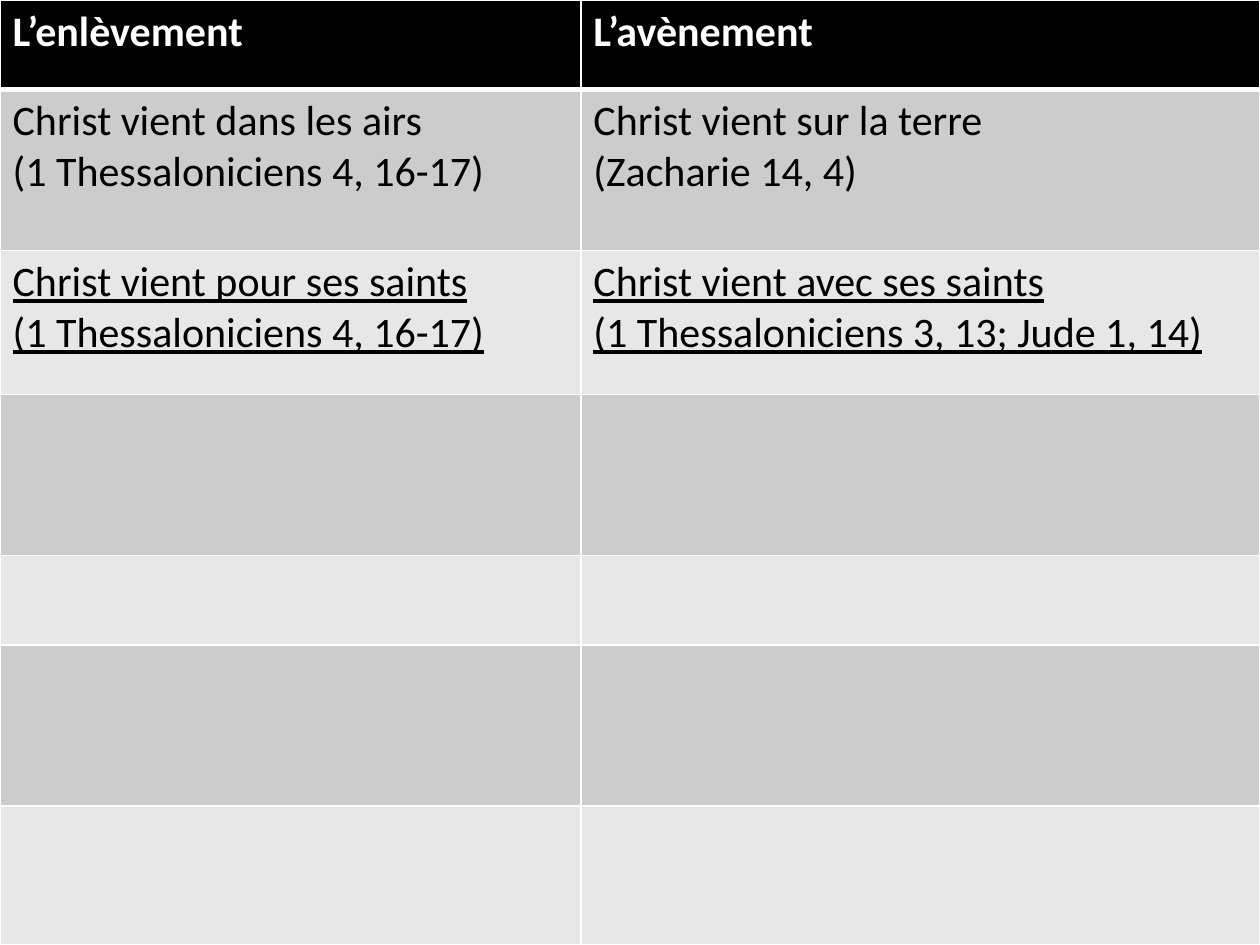
"""Build a slide with a table comparing the rapture and the second coming."""
from lxml import etree
from pptx import Presentation
from pptx import util as u
from pptx.dml.color import RGBColor
from pptx.oxml.ns import qn

COLORS = {"head": "000000", "odd": "CCCCCC", "even": "E7E7E7",
          "light": "FFFFFF", "dark": "000000"}
COLUMNS = [11.71, 13.69]
ROWS = [
    (1.8, ["L’enlèvement", "L’avènement"]),
    (3.25, ["Christ vient dans les airs\n(1 Thessaloniciens 4, 16-17)",
            "Christ vient sur la terre\n(Zacharie 14, 4)"]),
    (2.9, ["Christ vient pour ses saints\n(1 Thessaloniciens 4, 16-17)",
           "Christ vient avec ses saints\n(1 Thessaloniciens 3, 13; Jude 1, 14)"]),
    (3.25, ["", ""]),
    (1.8, ["", ""]),
    (3.25, ["", ""]),
    (2.8, ["", ""]),
]
HEADER_ROW, UNDERLINED_ROW = 0, 2


def rgb(name):
    return RGBColor.from_string(COLORS[name])


def add_borders(cell, widths):
    tc_pr = cell._tc.get_or_add_tcPr()
    for side, width in widths.items():
        ln = etree.SubElement(tc_pr, qn(f"a:ln{side}"), w=str(u.Pt(width)))
        fill = etree.SubElement(ln, qn("a:solidFill"))
        etree.SubElement(fill, qn("a:srgbClr"), val=COLORS["light"])


def style_cell(cell, row, content):
    header = row == HEADER_ROW
    add_borders(cell, {"L": 1, "R": 1, "T": 3 if row == HEADER_ROW + 1 else 1,
                       "B": 3 if header else 1})
    cell.fill.solid()
    cell.fill.fore_color.rgb = rgb("head" if header else "odd" if row % 2 else "even")
    cell.text = content
    for p in cell.text_frame.paragraphs:
        p.font.name = "Calibri"
        p.font.size = u.Pt(24)
        p.font.bold = header
        p.font.underline = row == UNDERLINED_ROW
        p.font.color.rgb = rgb("light" if header else "dark")


def main():
    prs = Presentation()
    prs.slide_width, prs.slide_height = u.Cm(25.4), u.Cm(19.05)
    s = prs.slides.add_slide(prs.slide_layouts[6])
    table = s.shapes.add_table(len(ROWS), len(COLUMNS), u.Cm(0), u.Cm(0),
                               prs.slide_width, prs.slide_height).table
    for column, width in zip(table.columns, COLUMNS):
        column.width = u.Cm(width)
    for i, (height, contents) in enumerate(ROWS):
        table.rows[i].height = u.Cm(height)
        for j, content in enumerate(contents):
            style_cell(table.cell(i, j), i, content)
    prs.save("out.pptx")


if __name__ == "__main__":
    main()
